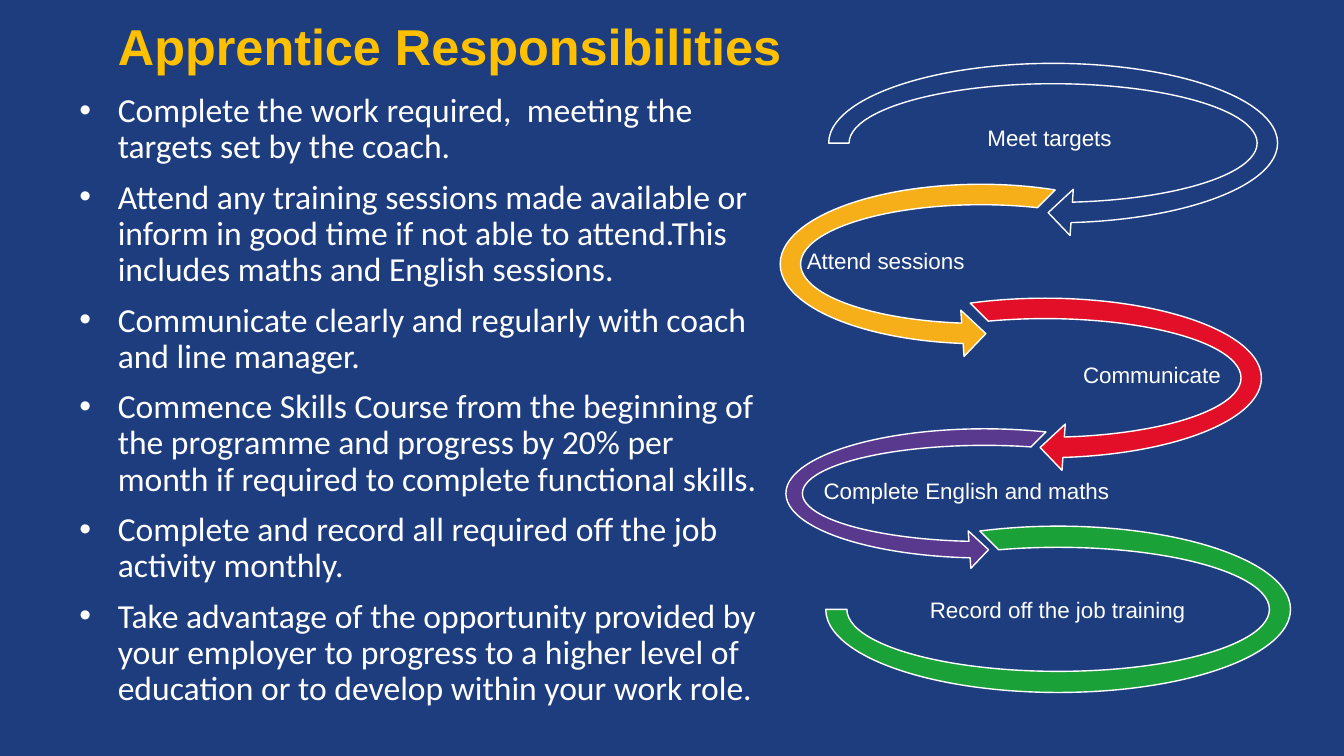
from lxml import etree
from pptx import Presentation
from pptx.dml.color import RGBColor
from pptx.enum.shapes import MSO_SHAPE
from pptx.enum.text import MSO_ANCHOR, MSO_AUTO_SIZE, PP_ALIGN
from pptx.oxml.ns import qn
from pptx.util import Inches, Pt

NAVY = RGBColor(0x1E, 0x3D, 0x7F)
GOLD = RGBColor(0xFF, 0xC0, 0x00)
AMBER = RGBColor(0xF6, 0xAE, 0x19)
RED = RGBColor(0xE3, 0x0E, 0x28)
PURPLE = RGBColor(0x58, 0x39, 0x8E)
GREEN = RGBColor(0x1A, 0xA2, 0x39)
WHITE = RGBColor(0xFF, 0xFF, 0xFF)

RIGHT = MSO_SHAPE.CIRCULAR_ARROW
LEFT = MSO_SHAPE.LEFT_CIRCULAR_ARROW
ARC = MSO_SHAPE.BLOCK_ARC
MIDDLE = MSO_ANCHOR.MIDDLE
TOP = MSO_ANCHOR.TOP
NO_FIT = MSO_AUTO_SIZE.NONE
START, CENTER = PP_ALIGN.LEFT, PP_ALIGN.CENTER

DUTIES = [
    "Complete the work required,  meeting the targets set by the coach.",
    "Attend any training sessions made available or inform in good time "
    "if not able to attend.This includes maths and English sessions.",
    "Communicate clearly and regularly with coach and line manager.",
    "Commence Skills Course from the beginning of the programme and progress "
    "by 20% per month if required to complete functional skills.",
    "Complete and record all required off the job activity monthly.",
    "Take advantage of the opportunity provided by your employer to progress "
    "to a higher level of education or to develop within your work role.",
]

# Loop settings: thickness, head angle, end angle, start angle, head width
HEAD = (0.11, 11.42)
LEFT_ADJ = (*HEAD, 63, 189, 0.125)

# Kind, fill, settings, place of the loop, label, place of the label
STEPS = [
    (RIGHT, NAVY, (*HEAD, 45, 108, 0.125), (8.09, 0.5, 4.71, 1.84),
     "Meet targets", (9.33, 1.13, 2.16, 0.51)),
    (LEFT, AMBER, LEFT_ADJ, (7.61, 1.7, 4.24, 1.84),
     "Attend sessions", (7.57, 2.35, 2.43, 0.51)),
    (RIGHT, RED, (*HEAD, 45, 135, 0.125), (8.09, 2.83, 4.55, 1.84),
     "Communicate", (9.67, 3.48, 3.51, 0.51)),
    (LEFT, PURPLE, LEFT_ADJ, (7.69, 4.15, 4.15, 1.49),
     "Complete English and maths", (7.79, 4.67, 3.59, 0.42)),
    (ARC, GREEN, (135, 108, 0.127), (8.19, 5.22, 4.61, 1.65),
     "Record off the job training", (8.75, 5.79, 3.48, 0.54)),
]


class Deck:
    def __init__(self):
        self.prs = Presentation()
        self.prs.slide_width = Inches(13.33)
        self.prs.slide_height = Inches(7.5)
        self.slide = self.prs.slides.add_slide(self.prs.slide_layouts[5])
        fill = self.slide.background.fill
        fill.solid()
        fill.fore_color.rgb = NAVY

    def frame(self, shape, anchor):
        text = shape.text_frame
        text.word_wrap = True
        text.auto_size = NO_FIT
        text.vertical_anchor = anchor
        return text

    def run(self, para, words, size, font="Arial", color=WHITE, bold=False,
            align=START):
        para.alignment = align
        para.line_spacing = 0.9
        run = para.add_run()
        run.text = words
        run.font.size = Pt(size)
        run.font.name = font
        run.font.bold = bold
        run.font.color.rgb = color

    def title(self, words, place):
        shape = self.slide.shapes.title
        shape.left, shape.top, shape.width, shape.height = map(Inches, place)
        text = self.frame(shape, MIDDLE)
        self.run(text.paragraphs[0], words, 36, color=GOLD, bold=True)

    def bullets(self, items, place):
        box = self.slide.shapes.add_textbox(*map(Inches, place))
        text = self.frame(box, TOP)
        for i, item in enumerate(items):
            para = text.add_paragraph() if i else text.paragraphs[0]
            props = para._p.get_or_add_pPr()
            props.set("marL", str(Inches(0.38)))
            props.set("indent", str(Inches(-0.38)))
            etree.SubElement(props, qn("a:buFont"), typeface="Arial")
            etree.SubElement(props, qn("a:buChar"), char="•")
            para.space_before = Pt(10 if i else 0)
            self.run(para, item, 24, "Calibri")

    def loop(self, kind, color, adjust, place):
        shape = self.slide.shapes.add_shape(kind, *map(Inches, place))
        for i, value in enumerate(adjust):
            shape.adjustments[i] = value
        shape.shadow.inherit = False
        shape.fill.solid()
        shape.fill.fore_color.rgb = color
        shape.line.color.rgb = WHITE
        shape.line.width = Pt(1)

    def label(self, words, place):
        box = self.slide.shapes.add_textbox(*map(Inches, place))
        text = self.frame(box, MIDDLE)
        text.margin_left = text.margin_right = Inches(0.01)
        text.margin_top = text.margin_bottom = Inches(0.01)
        self.run(text.paragraphs[0], words, 16, align=CENTER)


def main():
    deck = Deck()

    # Title and duties
    deck.title("Apprentice Responsibilities", (1.07, 0.15, 7.71, 0.67))
    deck.bullets(DUTIES, (0.69, 0.88, 7, 6.25))

    # Chain of loops
    for kind, color, adjust, place, words, spot in STEPS:
        deck.loop(kind, color, adjust, place)
        deck.label(words, spot)

    deck.prs.save("out.pptx")


if __name__ == "__main__":
    main()
